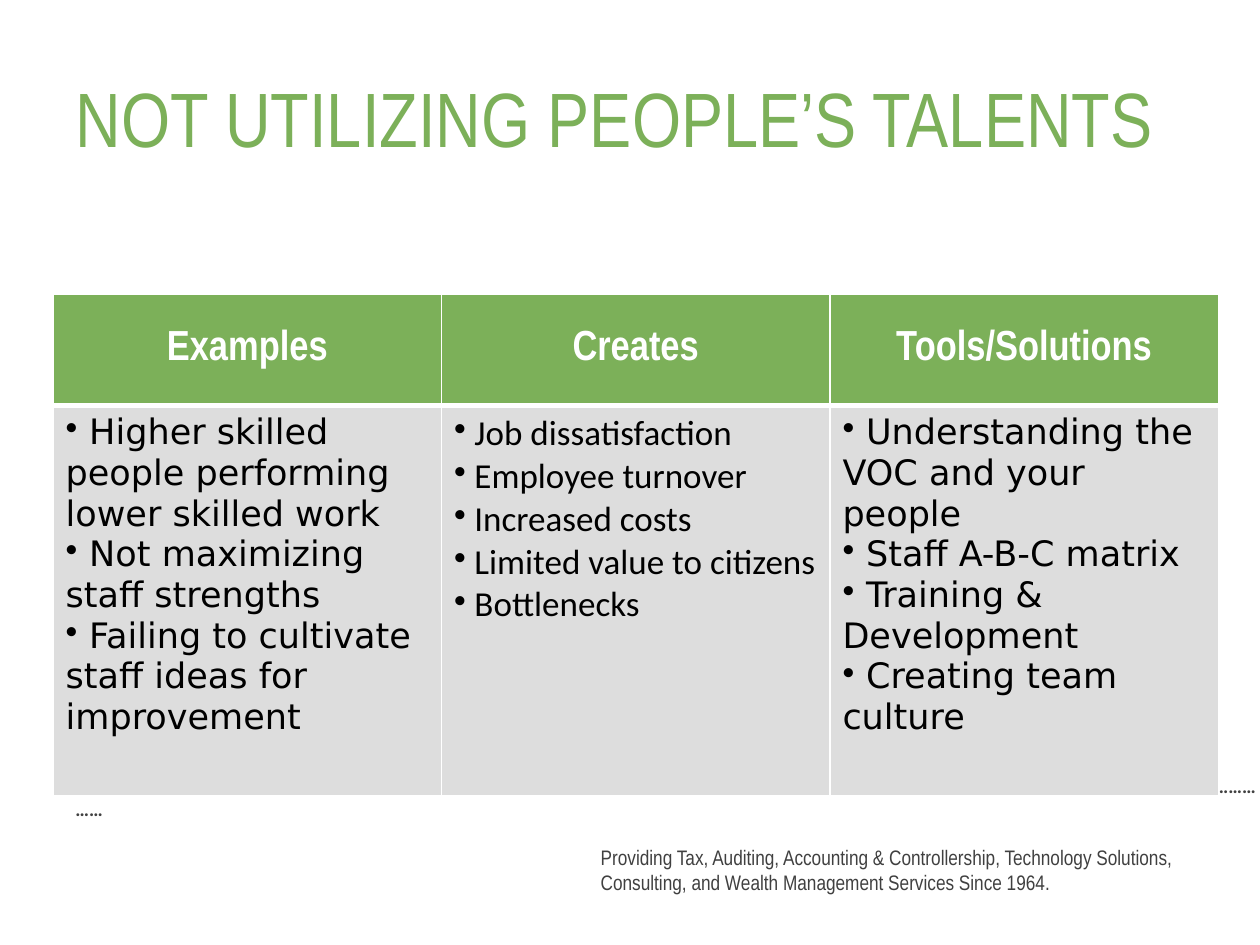
from lxml import etree
from pptx import Presentation
from pptx.dml.color import RGBColor
from pptx.enum.text import MSO_ANCHOR, PP_ALIGN
from pptx.oxml.ns import qn
from pptx.util import Cm, Pt

LEFT, CENTER = PP_ALIGN.LEFT, PP_ALIGN.CENTER
TOP, MIDDLE = MSO_ANCHOR.TOP, MSO_ANCHOR.MIDDLE

GREEN = RGBColor(0x7C, 0xB0, 0x59)
GRAY = RGBColor(0xDD, 0xDD, 0xDD)
DARK = RGBColor(0x40, 0x40, 0x40)
BLACK = RGBColor(0, 0, 0)
WHITE = RGBColor(0xFF, 0xFF, 0xFF)

TITLE_FONT = {"name": "Arial Narrow", "size": Pt(44), "bold": False}
HEADING_FONT = {"name": "Arial Narrow", "size": Pt(24), "bold": True}
TAGLINE_FONT = {"name": "Arial Narrow", "size": Pt(12), "bold": False}
DOTS_FONT = {"name": "Calibri", "size": Pt(11), "bold": True}
LIST_FONT = {"size": Pt(20), "bold": False}

TAGLINE = ("Providing Tax, Auditing, Accounting & Controllership, Technology "
           "Solutions, Consulting, and Wealth Management Services Since 1964.")

COLUMNS = [
    ("Examples", "DejaVu Sans", [
        "Higher skilled people performing lower skilled work",
        "Not maximizing staff strengths",
        "Failing to cultivate staff ideas for improvement",
    ]),
    ("Creates", "Calibri", [
        "Job dissatisfaction",
        "Employee turnover",
        "Increased costs",
        "Limited value to citizens",
        "Bottlenecks",
    ]),
    ("Tools/Solutions", "DejaVu Sans", [
        "Understanding the VOC and your people",
        "Staff A-B-C matrix",
        "Training & Development",
        "Creating team culture",
    ]),
]


def format_font(font, values, color):
    for key, value in values.items():
        setattr(font, key, value)
    font.color.rgb = color


def write_line(paragraph, text, values, color, align=LEFT):
    paragraph.alignment = align
    run = paragraph.add_run()
    run.text = text
    format_font(run.font, values, color)


def add_bullet(paragraph):
    properties = paragraph._p.get_or_add_pPr()
    properties.set("marL", "0")
    properties.set("indent", "0")
    etree.SubElement(properties, qn("a:buChar"), char="•")


def add_title(slide, text):
    title = slide.shapes.title
    title.left, title.top = Cm(1.27), Cm(0.76)
    title.width, title.height = Cm(22.86), Cm(3.18)
    title.text_frame.vertical_anchor = MIDDLE
    write_line(title.text_frame.paragraphs[0], text, TITLE_FONT, GREEN)


def add_text(slide, box, text, values, anchor=TOP, wrap=True):
    frame = slide.shapes.add_textbox(*map(Cm, box)).text_frame
    frame.word_wrap = wrap
    frame.vertical_anchor = anchor
    write_line(frame.paragraphs[0], text, values, DARK)


def style_cell(cell, fill, anchor, thick_side):
    properties = cell._tc.get_or_add_tcPr()
    for side in ("lnL", "lnR", "lnT", "lnB"):
        width = Pt(3 if side == thick_side else 1)
        border = etree.SubElement(properties, qn(f"a:{side}"), w=str(width))
        solid = etree.SubElement(border, qn("a:solidFill"))
        etree.SubElement(solid, qn("a:srgbClr"), val=str(WHITE))
    cell.fill.solid()
    cell.fill.fore_color.rgb = fill
    cell.vertical_anchor = anchor


def fill_list(cell, items, font_name):
    frame = cell.text_frame
    for index, item in enumerate(items):
        paragraph = frame.add_paragraph() if index else frame.paragraphs[0]
        add_bullet(paragraph)
        write_line(paragraph, f" {item}", {**LIST_FONT, "name": font_name}, BLACK)


def add_comparison_table(slide):
    table = slide.shapes.add_table(
        2, len(COLUMNS), Cm(1.07), Cm(5.93), Cm(23.49), Cm(10.12)).table
    table.horz_banding = False
    table.rows[0].height, table.rows[1].height = Cm(2.25), Cm(7.87)
    for index, (heading, font_name, items) in enumerate(COLUMNS):
        head, body = table.cell(0, index), table.cell(1, index)
        style_cell(head, GREEN, MIDDLE, "lnB")
        style_cell(body, GRAY, TOP, "lnT")
        write_line(head.text_frame.paragraphs[0], heading, HEADING_FONT, WHITE, CENTER)
        fill_list(body, items, font_name)


def main():
    presentation = Presentation()
    presentation.slide_width, presentation.slide_height = Cm(25.4), Cm(19.05)
    slide = presentation.slides.add_slide(presentation.slide_layouts[5])
    add_text(slide, (1.27, 15.49, 24.56, 0.74), "…" * 88, DOTS_FONT, wrap=False)
    add_text(slide, (11.86, 16.59, 13.13, 1.88), TAGLINE, TAGLINE_FONT, MIDDLE)
    add_comparison_table(slide)
    add_title(slide, "NOT UTILIZING PEOPLE’S TALENTS")
    presentation.save("out.pptx")


if __name__ == "__main__":
    main()
